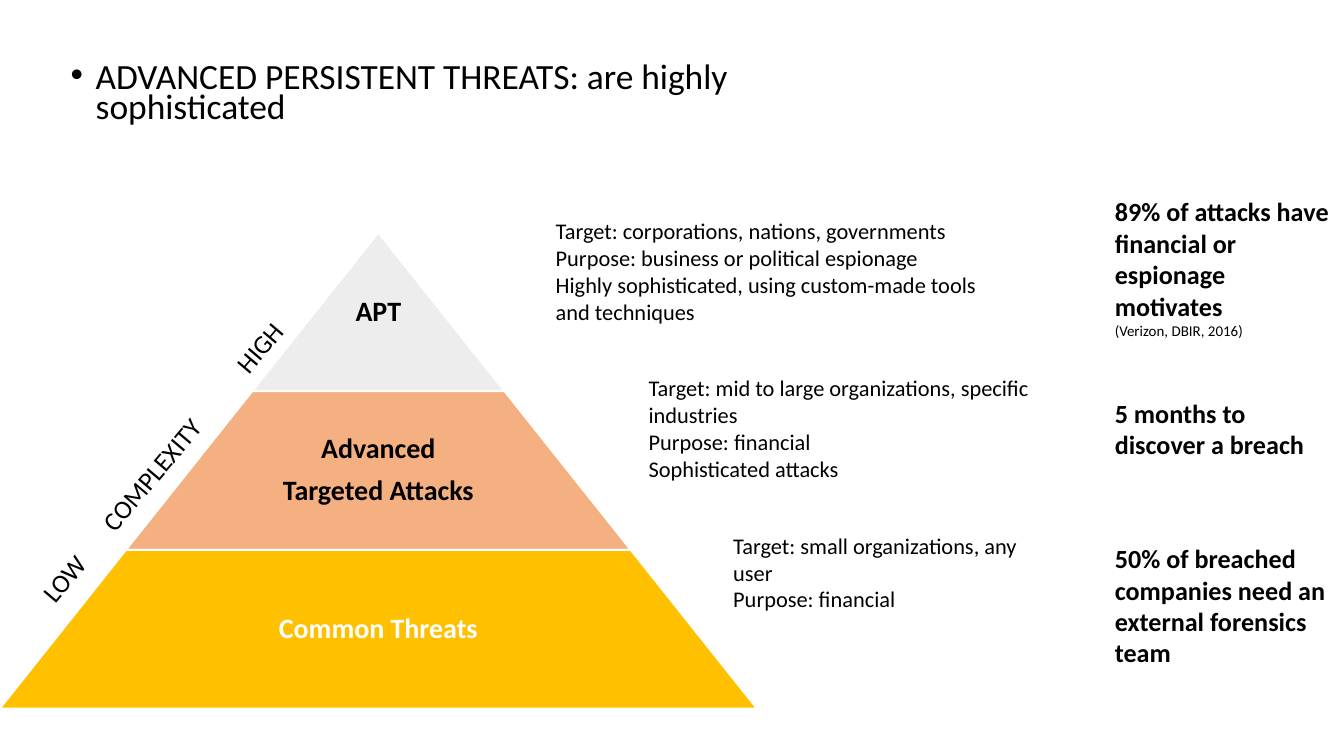
from dataclasses import dataclass
from lxml.etree import SubElement
from pptx import Presentation
from pptx.dml.color import RGBColor
from pptx.enum.shapes import MSO_SHAPE
from pptx.enum.text import MSO_ANCHOR, PP_ALIGN
from pptx.oxml.ns import qn
from pptx.shapes.autoshape import Shape
from pptx.slide import Slide
from pptx.util import Pt

COLORS = {
    "text": "000000",
    "light": "FFFFFF",
    "apt": "EDEDED",
    "advanced": "F4B081",
    "common": "FFC000",
}
FONT = "Calibri"
PYRAMID_CENTER, PYRAMID_TOP = 202.7, 124.6
LEVEL_HEIGHT, LEVEL_SLOPE = 85, 67.6
STAT_LEFT, STAT_WIDTH = 591.8, 128.2


@dataclass
class Note:
    left: float
    top: float
    width: float
    height: float
    text: str
    size: float = 12
    bold: bool = False
    color: str = "text"
    inset_x: float = 5.4
    inset_y: float = 2.7


@dataclass
class Level:
    text: str
    fill: str
    color: str = "text"


TITLE = Note(32.4, 32.4, 456.5, 38.2,
             "ADVANCED PERSISTENT THREATS: are highly sophisticated", 19)
SCALE = Note(-25.9, 211, 267.8, 21.6, "LOW\tCOMPLEXITY\tHIGH", 14)
SCALE_TABS = (49.7, 160.7)

LEVELS = [
    Level("APT", "apt"),
    Level("Advanced\nTargeted Attacks", "advanced"),
    Level("Common Threats", "common", "light"),
]

NOTES = [
    Note(292.3, 113.8, 244.8, 63.4,
         "Target: corporations, nations, governments\n"
         "Purpose: business or political espionage\n"
         "Highly sophisticated, using custom-made tools and techniques"),
    Note(342, 198, 234, 63.4,
         "Target: mid to large organizations, specific industries\n"
         "Purpose: financial\nSophisticated attacks"),
    Note(387.4, 282.2, 177.1, 49,
         "Target: small organizations, any user\nPurpose: financial"),
]

MOTIVES = Note(STAT_LEFT, 102.2, STAT_WIDTH, 80.6,
               "89% of attacks have financial or espionage motivates\n"
               "(Verizon, DBIR, 2016)", 14, True)
STATS = [
    Note(STAT_LEFT, 210.2, STAT_WIDTH, 38.2,
         "5 months to discover a breach", 14, True),
    Note(STAT_LEFT, 288, STAT_WIDTH, 70.6,
         "50% of breached companies need an external forensics team", 14, True),
]


def rgb(name: str) -> RGBColor:
    return RGBColor.from_string(COLORS[name])


def add_note(s: Slide, note: Note) -> Shape:
    sp = s.shapes.add_textbox(Pt(note.left), Pt(note.top),
                              Pt(note.width), Pt(note.height))
    tf = sp.text_frame
    tf.word_wrap = True
    tf.margin_left = tf.margin_right = Pt(note.inset_x)
    tf.margin_top = tf.margin_bottom = Pt(note.inset_y)
    tf.text = note.text
    for p in tf.paragraphs:
        for r in p.runs:
            r.font.name = FONT
            r.font.size = Pt(note.size)
            r.font.bold = note.bold
            r.font.color.rgb = rgb(note.color)
    return sp


def add_title(s: Slide) -> None:
    p = add_note(s, TITLE).text_frame.paragraphs[0]
    p.line_spacing = 0.7
    pPr = p._p.get_or_add_pPr()
    pPr.set("marL", str(Pt(13.5)))
    pPr.set("indent", str(Pt(-13.5)))
    SubElement(pPr, qn("a:buFont"), typeface="Arial")
    SubElement(pPr, qn("a:buChar"), char="•")


def add_level(s: Slide, index: int, level: Level) -> None:
    top = PYRAMID_TOP + index * LEVEL_HEIGHT
    apex_width = 2 * LEVEL_SLOPE
    width = apex_width * (index + 1)
    sp = s.shapes.add_shape(MSO_SHAPE.TRAPEZOID, Pt(PYRAMID_CENTER - width / 2),
                            Pt(top), Pt(width), Pt(LEVEL_HEIGHT))
    sp.adjustments[0] = LEVEL_SLOPE / LEVEL_HEIGHT
    sp.shadow.inherit = False
    sp.fill.solid()
    sp.fill.fore_color.rgb = rgb(level.fill)
    sp.line.color.rgb = rgb("light")
    sp.line.width = Pt(1)

    text_width = max(apex_width, 0.65 * width)
    label = Note(PYRAMID_CENTER - text_width / 2, top, text_width, LEVEL_HEIGHT,
                 level.text, 15, True, level.color, 1.4, 1.4)
    tf = add_note(s, label).text_frame
    tf.vertical_anchor = MSO_ANCHOR.MIDDLE
    for i, p in enumerate(tf.paragraphs):
        p.alignment = PP_ALIGN.CENTER
        p.line_spacing = 0.9
        if i:
            p.space_before = Pt(6)


def add_scale(s: Slide) -> None:
    sp = add_note(s, SCALE)
    sp.rotation = 310.2
    pPr = sp.text_frame.paragraphs[0]._p.get_or_add_pPr()
    tabs = SubElement(pPr, qn("a:tabLst"))
    for position in SCALE_TABS:
        SubElement(tabs, qn("a:tab"), pos=str(Pt(position)), algn="l")


def add_motives(s: Slide) -> None:
    citation = add_note(s, MOTIVES).text_frame.paragraphs[1].runs[0]
    citation.font.size = Pt(8)
    citation.font.bold = False


def main() -> None:
    prs = Presentation()
    prs.slide_width, prs.slide_height = Pt(720), Pt(405)
    s = prs.slides.add_slide(prs.slide_layouts[6])
    add_title(s)
    for index, level in enumerate(LEVELS):
        add_level(s, index, level)
    for note in NOTES:
        add_note(s, note)
    add_scale(s)
    add_motives(s)
    for stat in STATS:
        add_note(s, stat)
    prs.save("out.pptx")


if __name__ == "__main__":
    main()
